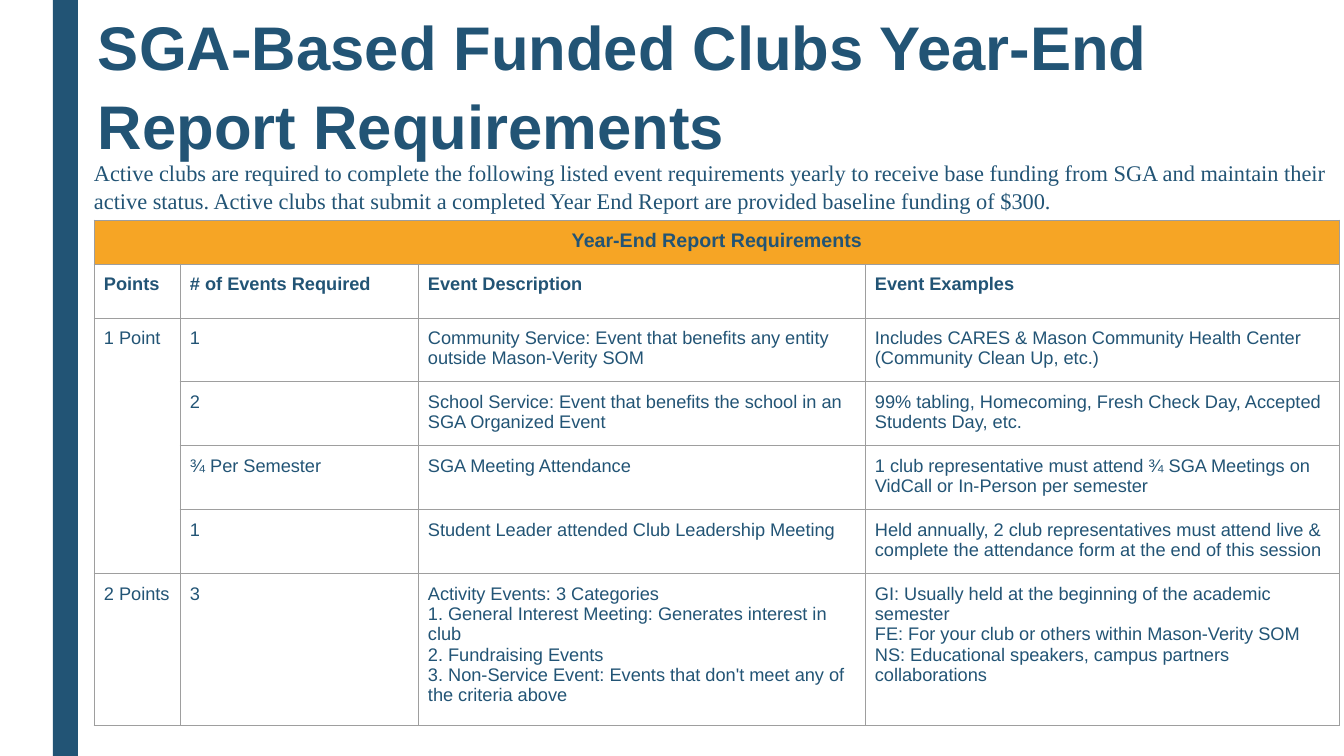
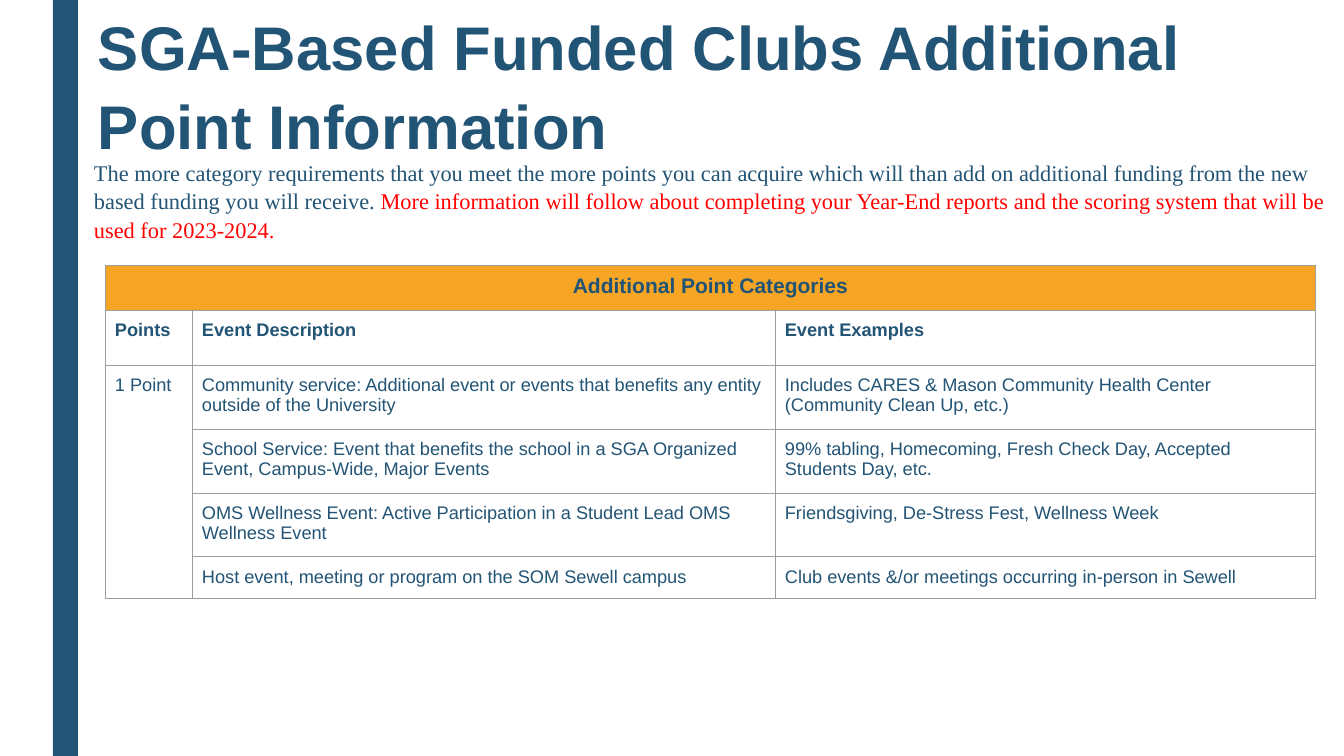
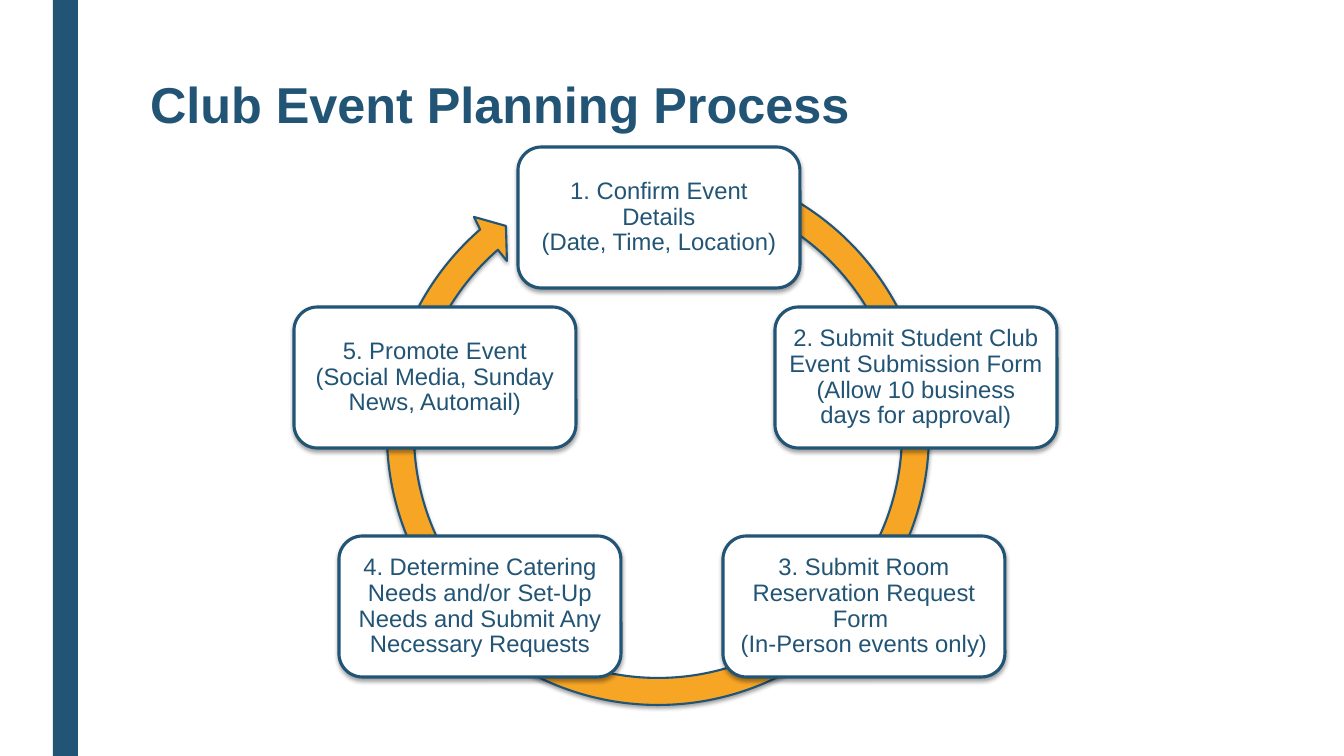
import math

import lxml.etree
import pptx
import pptx.dml.color
import pptx.enum.shapes
import pptx.enum.text
import pptx.oxml
import pptx.oxml.ns
import pptx.util

PX = 914400 / 100.8
NAVY = pptx.dml.color.RGBColor(0x22, 0x54, 0x75)
GOLD = pptx.dml.color.RGBColor(0xF6, 0xA5, 0x25)
RED = pptx.dml.color.RGBColor(0xFF, 0x00, 0x00)
WHITE = pptx.dml.color.RGBColor(0xFF, 0xFF, 0xFF)
GRID = pptx.dml.color.RGBColor(0x9E, 0x9E, 0x9E)

ALIGN = pptx.enum.text.PP_ALIGN
ANCHOR = pptx.enum.text.MSO_ANCHOR
SHAPE = pptx.enum.shapes.MSO_SHAPE
NAMESPACE = pptx.oxml.ns.nsdecls("a")
BORDER = (
    '<a:{side} {namespace} w="9525"><a:solidFill><a:srgbClr val="{color}"/></a:solidFill></a:{side}>'
)
SHADOW = (
    f'<a:effectLst {NAMESPACE}><a:outerShdw blurRad="39000" dist="20000" dir="5400000" rotWithShape="0">'
    '<a:srgbClr val="000000"><a:alpha val="37000"/></a:srgbClr></a:outerShdw></a:effectLst>'
)


def px(*lengths):
    return [round(length * PX) for length in lengths]


def format_text(holder, margins, anchor, paragraph_format, font_format, color=NAVY):
    left, top, right, bottom = px(*margins)
    holder_format = {
        "margin_left": left,
        "margin_top": top,
        "margin_right": right,
        "margin_bottom": bottom,
        "vertical_anchor": anchor,
    }
    for name, value in holder_format.items():
        setattr(holder, name, value)
    frame = getattr(holder, "text_frame", holder)
    frame.word_wrap = True
    for paragraph in frame.paragraphs:
        for name, value in paragraph_format.items():
            setattr(paragraph, name, value)
        for run in paragraph.runs:
            for name, value in font_format.items():
                setattr(run.font, name, value)
            run.font.color.rgb = color


EXAMPLES_COMMUNITY = "Includes CARES & Mason Community Health Center (Community Clean Up, etc.)"
EXAMPLES_SCHOOL = "99% tabling, Homecoming, Fresh Check Day, Accepted Students Day, etc."

TABLE_SLIDES = [
    {
        "title": "SGA-Based Funded Clubs Year-End Report Requirements",
        "intro": [
            (
                "Active clubs are required to complete the following listed event requirements yearly "
                "to receive base funding from SGA and maintain their active status. Active clubs that "
                "submit a completed Year End Report are provided baseline funding of $300.",
                NAVY,
            ),
        ],
        "intro_height": 229,
        "origin": (94, 220),
        "columns": [86, 238, 447, 475],
        "row_heights": [44, 54, 64, 64, 64, 64, 151],
        "heading_size": 14,
        "rows": [
            ["Year-End Report Requirements", "", "", ""],
            ["Points", "# of Events Required", "Event Description", "Event Examples"],
            [
                "1 Point",
                "1",
                "Community Service: Event that benefits any entity outside Mason-Verity SOM",
                EXAMPLES_COMMUNITY,
            ],
            [
                "",
                "2",
                "School Service: Event that benefits the school in an SGA Organized Event",
                EXAMPLES_SCHOOL,
            ],
            [
                "",
                "¾ Per Semester",
                "SGA Meeting Attendance",
                "1 club representative must attend ¾ SGA Meetings on VidCall or In-Person per semester",
            ],
            [
                "",
                "1",
                "Student Leader attended Club Leadership Meeting",
                "Held annually, 2 club representatives must attend live & complete the attendance form "
                "at the end of this session",
            ],
            [
                "2 Points",
                "3",
                "Activity Events: 3 Categories\n"
                "1. General Interest Meeting: Generates interest in club\n"
                "2. Fundraising Events\n"
                "3. Non-Service Event: Events that don't meet any of the criteria above",
                "GI: Usually held at the beginning of the academic semester\n"
                "FE: For your club or others within Mason-Verity SOM\n"
                "NS: Educational speakers, campus partners collaborations",
            ],
        ],
    },
    {
        "title": "SGA-Based Funded Clubs Additional Point Information",
        "intro": [
            (
                "The more category requirements that you meet the more points you can acquire which "
                "will than add on additional funding from the new based funding you will receive. ",
                NAVY,
            ),
            (
                "More information will follow about completing your Year-End reports and the scoring "
                "system that will be used for 2023-2024.",
                RED,
            ),
        ],
        "intro_height": 320,
        "origin": (105, 265),
        "columns": [87, 583, 541],
        "row_heights": [45, 55, 64, 64, 63, 42],
        "heading_size": 15,
        "rows": [
            ["Additional Point Categories", "", ""],
            ["Points", "Event Description", "Event Examples"],
            [
                "1 Point",
                "Community service: Additional event or events that benefits any entity outside of the University",
                EXAMPLES_COMMUNITY,
            ],
            [
                "",
                "School Service: Event that benefits the school in a SGA Organized Event, Campus-Wide, Major Events",
                EXAMPLES_SCHOOL,
            ],
            [
                "",
                "OMS Wellness Event: Active Participation in a Student Lead OMS Wellness Event",
                "Friendsgiving, De-Stress Fest, Wellness Week",
            ],
            [
                "",
                "Host event, meeting or program on the SOM Sewell campus",
                "Club events &/or meetings occurring in-person in Sewell",
            ],
        ],
    },
]

MARGIN_BAND = (0, 53, WHITE)
ACCENT_BAND = (53, 25, NAVY)
WIDE_TITLE = {"box": (87, -6, 1233, 170), "margins": (11, 10, 0, 0), "size": 44, "spacing": 1.07}
CYCLE_TITLE = {"box": (150, 73, 1044, 61), "margins": (0, 0, 0, 0), "size": 36, "spacing": 1.0}
FRAMES = [
    (TABLE_SLIDES[0]["title"], WIDE_TITLE, [MARGIN_BAND, ACCENT_BAND]),
    (TABLE_SLIDES[1]["title"], WIDE_TITLE, [ACCENT_BAND]),
    ("Club Event Planning Process", CYCLE_TITLE, [MARGIN_BAND, ACCENT_BAND]),
]

STEPS = [
    (518, 147, "1. Confirm Event Details\v(Date, Time, Location)"),
    (775, 307, "2. Submit Student Club Event Submission Form (Allow 10 business days for approval)"),
    (723, 536, "3. Submit Room Reservation Request Form \v(In-Person events only)"),
    (339, 536, "4. Determine Catering Needs and/or Set-Up Needs and Submit Any Necessary Requests"),
    (294, 307, "5. Promote Event (Social Media, Sunday News, Automail)"),
]

presentation = pptx.Presentation()
presentation.slide_width, presentation.slide_height = px(1344, 756)

for text, style, bands in FRAMES:
    slide = presentation.slides.add_slide(presentation.slide_layouts[5])
    for left, width, color in bands:
        band = slide.shapes.add_shape(SHAPE.RECTANGLE, *px(left, 0, width, 756))
        band.shadow.inherit = False
        band.fill.solid()
        band.fill.fore_color.rgb = color
        band.line.fill.background()

    title = slide.shapes.title
    title.left, title.top, title.width, title.height = px(*style["box"])
    title.text_frame.text = text
    title.text_frame.auto_size = pptx.enum.text.MSO_AUTO_SIZE.NONE
    format_text(
        title.text_frame,
        style["margins"],
        ANCHOR.TOP,
        {"alignment": ALIGN.LEFT, "line_spacing": style["spacing"]},
        {"name": "Arial", "size": pptx.util.Pt(style["size"]), "bold": True},
    )

for slide, content in zip(presentation.slides, TABLE_SLIDES):
    intro = slide.shapes.add_textbox(*px(94, 146, 1258, content["intro_height"]))
    paragraph = intro.text_frame.paragraphs[0]
    for text, color in content["intro"]:
        paragraph.add_run().text = text
    format_text(
        intro.text_frame,
        (0, 11, 0, 0),
        ANCHOR.TOP,
        {"alignment": ALIGN.LEFT, "line_spacing": 1.07},
        {"name": "Times New Roman", "size": pptx.util.Pt(16)},
    )
    for run, (text, color) in zip(paragraph.runs, content["intro"]):
        run.font.color.rgb = color

    rows, columns, heights = content["rows"], content["columns"], content["row_heights"]
    size = (sum(columns), sum(heights))
    table = slide.shapes.add_table(len(rows), len(columns), *px(*content["origin"], *size)).table
    table.first_row = False
    table.horz_banding = False
    for column, width in zip(table.columns, px(*columns)):
        column.width = width
    for row, height in zip(table.rows, px(*heights)):
        row.height = height
    table.cell(0, 0).merge(table.cell(0, len(columns) - 1))
    table.cell(2, 0).merge(table.cell(5, 0))

    for row_index, row in enumerate(rows):
        heading = row_index == 0
        for column_index, text in enumerate(row):
            cell = table.cell(row_index, column_index)
            properties = cell._tc.get_or_add_tcPr()
            for side in ("lnL", "lnR", "lnT", "lnB"):
                border = BORDER.format(side=side, namespace=NAMESPACE, color=GRID)
                properties.append(pptx.oxml.parse_xml(border))
            if heading:
                cell.fill.solid()
                cell.fill.fore_color.rgb = GOLD
            else:
                cell.fill.background()
            cell.text_frame.text = text
            format_text(
                cell,
                (10, 10, 10, 10),
                ANCHOR.TOP,
                {"alignment": ALIGN.CENTER if heading else ALIGN.LEFT},
                {
                    "name": "Arial",
                    "size": pptx.util.Pt(content["heading_size"] if heading else 13),
                    "bold": row_index < 2,
                },
            )

slide = presentation.slides[2]
center_x, center_y, outer_radius, inner_radius = 658, 434, 271, 244
outer_arc = [(outer_radius, angle) for angle in (-70, 0, 90, 180, 229)]
inner_arc = [(inner_radius, angle) for angle in (229, 180, 90, 0, -70)]
arrowhead = [(474, 217), (506, 226), (507, 261)]
outer_points, inner_points = [
    [
        (
            center_x + radius * math.cos(math.radians(angle)),
            center_y + radius * math.sin(math.radians(angle)),
        )
        for radius, angle in arc
    ]
    for arc in (outer_arc, inner_arc)
]
outline = [px(*point) for point in outer_points + arrowhead + inner_points]
builder = slide.shapes.build_freeform(*outline[0], scale=1.0)
builder.add_line_segments(outline[1:], close=True)
cycle_arrow = builder.convert_to_shape()

segments = cycle_arrow._element.findall(".//" + pptx.oxml.ns.qn("a:lnTo"))
inner_start = len(outer_arc) + len(arrowhead)
for arc, first in ((outer_arc, 0), (inner_arc, inner_start)):
    for index, ((radius, start), (radius, end)) in enumerate(zip(arc, arc[1:])):
        segment = segments[first + index]
        curve = lxml.etree.Element(pptx.oxml.ns.qn("a:arcTo"))
        radius_emu = str(px(radius)[0])
        values = {
            "wR": radius_emu,
            "hR": radius_emu,
            "stAng": str(start % 360 * 60000),
            "swAng": str((end - start) * 60000),
        }
        for name, value in values.items():
            curve.set(name, value)
        segment.getparent().replace(segment, curve)

cycle_shapes = [(cycle_arrow, GOLD, 1.5)]

for left, top, text in STEPS:
    step = slide.shapes.add_shape(SHAPE.ROUNDED_RECTANGLE, *px(left, top, 282, 141))
    step.text_frame.text = text
    format_text(
        step.text_frame,
        (7, 7, 7, 7),
        ANCHOR.MIDDLE,
        {"alignment": ALIGN.CENTER, "line_spacing": 0.9},
        {"name": "Arial", "size": pptx.util.Pt(17)},
    )
    cycle_shapes.append((step, WHITE, 2.25))

for shape, fill, line_width in cycle_shapes:
    shape.fill.solid()
    shape.fill.fore_color.rgb = fill
    shape.line.color.rgb = NAVY
    shape.line.width = pptx.util.Pt(line_width)
    shape._element.spPr.append(pptx.oxml.parse_xml(SHADOW))

presentation.save("out.pptx")
